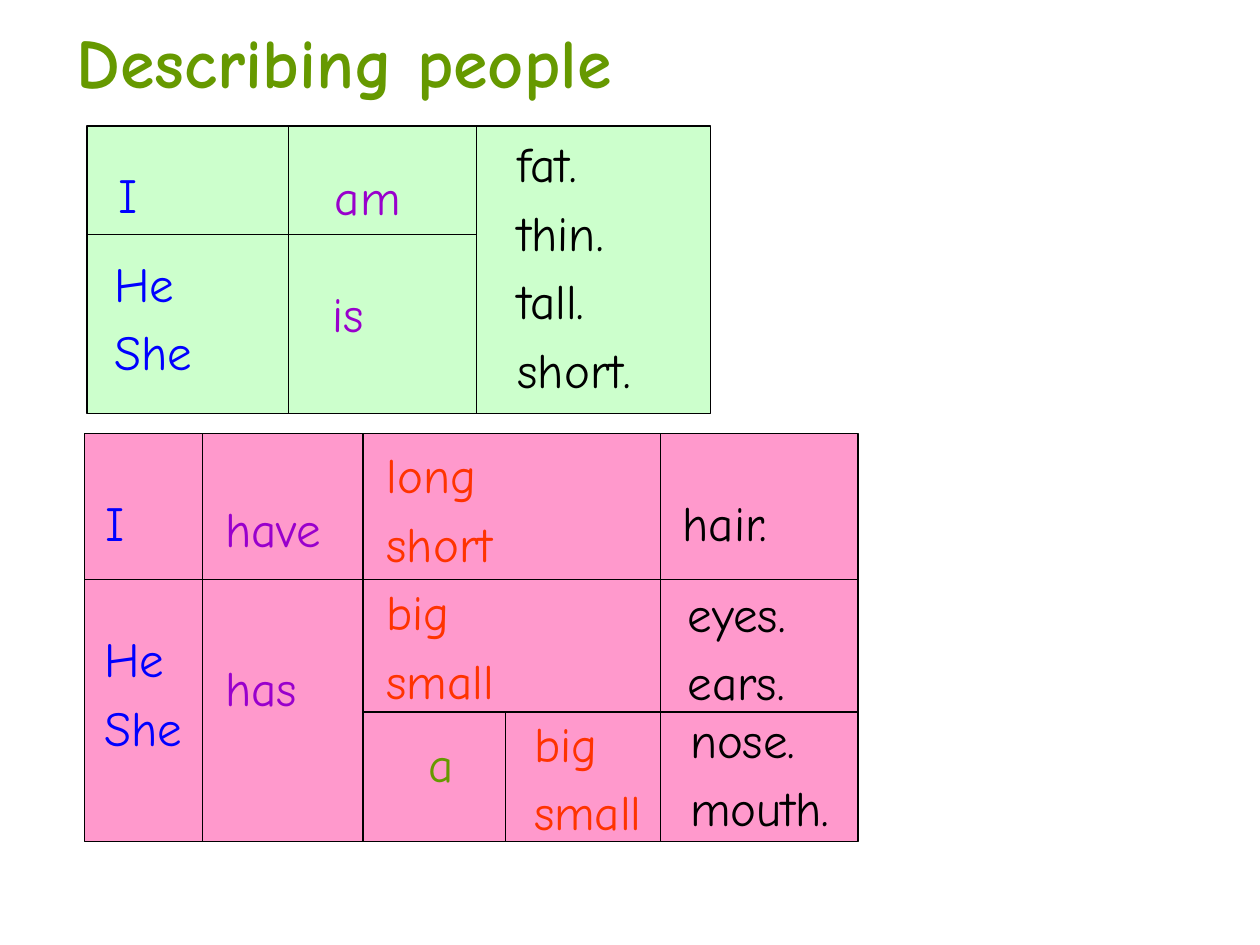
import pptx
import pptx.dml.color
import pptx.enum.shapes
import pptx.enum.text
import pptx.oxml.ns
import pptx.util
from lxml import etree

Inches = pptx.util.Inches
Pt = pptx.util.Pt
COLORS = {"black": "000000", "blue": "0000FF", "purple": "9900CC", "red": "FF3300",
          "olive": "669900", "mint": "CCFFCC", "pink": "FF99CC"}
FONT = {"name": "Comic Neue", "size": Pt(28), "bold": False}
FRAME = {"word_wrap": True, "vertical_anchor": pptx.enum.text.MSO_ANCHOR.TOP,
         "margin_left": Inches(0.1), "margin_right": Inches(0.1),
         "margin_top": Inches(0.05), "margin_bottom": Inches(0.05)}


def rgb(name):
    """Return the named colour."""
    return pptx.dml.color.RGBColor.from_string(COLORS[name])


def apply(obj, values):
    """Set each attribute of an object from a dict."""
    for key, value in values.items():
        setattr(obj, key, value)


def write(frame, words, color, **extra):
    """Fill a text frame with one paragraph per word."""
    apply(frame, FRAME)
    frame.text = "\n".join(words)
    for i, para in enumerate(frame.paragraphs):
        para.alignment = pptx.enum.text.PP_ALIGN.LEFT
        para.space_before = Pt(5.6 if i else 0)
        for run in para.runs:
            apply(run.font, {**FONT, **extra})
            run.font.color.rgb = rgb(color)


def stroke(line):
    """Give a line the thin black style."""
    line.color.rgb = rgb("black")
    line.width = Pt(0.75)


def add_rule(shapes, x1, y1, x2, y2):
    """Draw one dividing line."""
    rule = shapes.add_connector(pptx.enum.shapes.MSO_CONNECTOR.STRAIGHT,
                                *map(Inches, (x1, y1, x2, y2)))
    stroke(rule.line)
    etree.SubElement(rule._element.spPr, pptx.oxml.ns.qn("a:effectLst"))


def add_title(slide, box, text):
    """Place the slide title in its box."""
    title = slide.shapes.title
    apply(title, dict(zip(("left", "top", "width", "height"), map(Inches, box))))
    write(title.text_frame, [text], "olive", size=Pt(40), bold=True)


def add_panel(slide, box, fill, rules, cells):
    """Draw a grouped panel with its dividers and words."""
    left, top, width, height = box
    shapes = slide.shapes.add_group_shape().shapes
    panel = shapes.add_shape(pptx.enum.shapes.MSO_SHAPE.RECTANGLE, *map(Inches, box))
    panel.shadow.inherit = False
    panel.fill.solid()
    panel.fill.fore_color.rgb = rgb(fill)
    stroke(panel.line)
    for x1, y1, x2, y2 in rules:
        add_rule(shapes, left + x1, top + y1, left + x2, top + y2)
    for x, y, wide, color, words in cells:
        tall = 0.57 + 0.56 * (len(words) - 1)
        area = shapes.add_textbox(*map(Inches, (left + x, top + y, wide, tall)))
        write(area.text_frame, words, color)


def add_looks(slide, box):
    """Build the panel for the verb to be."""
    height = box[3]
    verb, look, row = 1.6, 3.09, 0.86
    rules = [(verb, 0, verb, height), (look, 0, look, height), (0, row, look, row)]
    cells = [
        (0.15, 0.26, 1.73, "blue", ["I"]),
        (0.12, 0.96, 1.18, "blue", ["He", "She"]),
        (1.87, 0.27, 1.34, "purple", ["am"]),
        (1.85, 1.2, 1.1, "purple", ["is"]),
        (3.32, 0.01, 1.81, "black", ["fat.", "thin.", "tall.", "short."]),
    ]
    add_panel(slide, box, "mint", rules, cells)


def add_parts(slide, box):
    """Build the panel for the verb to have."""
    width, height = box[2:]
    verb, size, one, noun = 0.94, 2.21, 3.34, 4.57
    upper, lower = 1.16, 2.21
    rules = [(x, 0, x, height) for x in (verb, size, noun)]
    rules += [(one, lower, one, height), (0, upper, width, upper),
              (size, lower, width, lower)]
    cells = [
        (0.07, 0.42, 0.64, "blue", ["I"]),
        (0.06, 1.5, 1.18, "blue", ["He", "She"]),
        (1.02, 0.47, 1.34, "purple", ["have"]),
        (1.02, 1.73, 1.1, "purple", ["has"]),
        (2.3, 0.04, 2.05, "red", ["long", "short", "big", "small"]),
        (2.63, 2.33, 0.94, "olive", ["a"]),
        (3.47, 2.17, 1.18, "red", ["big", "small"]),
        (4.65, 0.42, 1.42, "black", ["hair."]),
        (4.69, 1.14, 1.5, "black", ["eyes.", "ears."]),
        (4.71, 2.14, 1.42, "black", ["nose.", "mouth."]),
    ]
    add_panel(slide, box, "pink", rules, cells)


def main():
    """Build and save the slide."""
    deck = pptx.Presentation()
    deck.slide_width, deck.slide_height = Inches(10), Inches(7.5)
    slide = deck.slides.add_slide(deck.slide_layouts[5])
    add_title(slide, (0.51, 0.1, 6.14, 0.77), "Describing people")
    add_looks(slide, (0.69, 1, 4.95, 2.28))
    add_parts(slide, (0.67, 3.44, 6.14, 3.24))
    deck.save("out.pptx")


if __name__ == "__main__":
    main()
